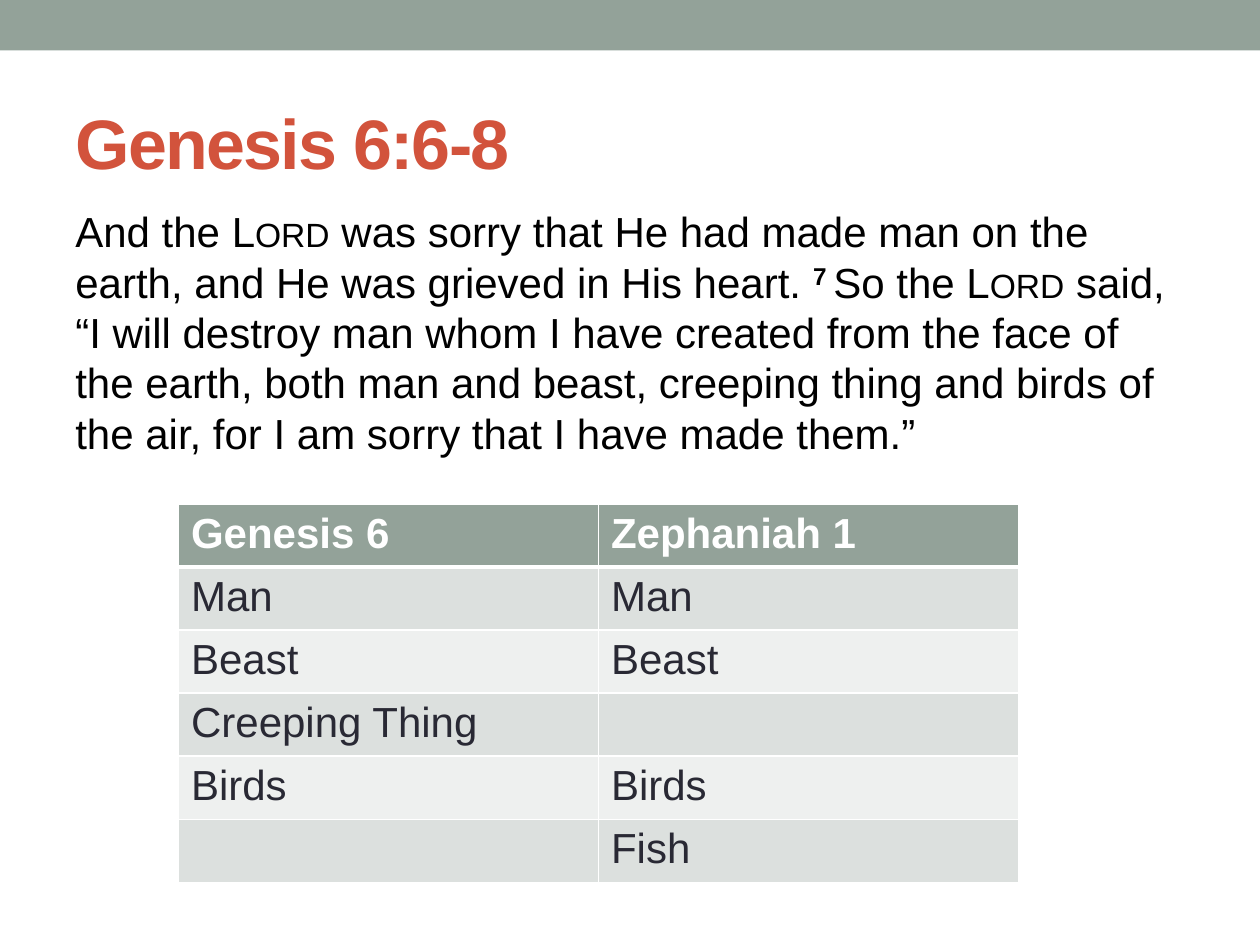
from pptx import Presentation
from pptx.dml.color import RGBColor
from pptx.enum.shapes import MSO_SHAPE
from pptx.enum.text import MSO_ANCHOR, PP_ALIGN
from pptx.oxml.ns import qn
from pptx.util import Pt
from lxml.etree import SubElement

SAGE = RGBColor(0x93, 0xA2, 0x99)
RUST = RGBColor(0xD2, 0x53, 0x3C)
BLACK = RGBColor(0, 0, 0)
WHITE = RGBColor(0xFF, 0xFF, 0xFF)
INK = RGBColor(0x29, 0x29, 0x34)
BANDS = [RGBColor(0xDC, 0xE0, 0xDE), RGBColor(0xEE, 0xF0, 0xEF)]

# Each span of the verse with its extra run attributes
SMALL_CAPS = {"cap": "small"}
VERSE_NUMBER = {"b": "1", "baseline": "30000"}
VERSE = [
    ("And the ", {}),
    ("Lord", SMALL_CAPS),
    (" was sorry that He had made man on the earth, "
     "and He was grieved in His heart. ", {}),
    ("7 ", VERSE_NUMBER),
    ("So the ", {}),
    ("Lord", SMALL_CAPS),
    (" said, “I will destroy man whom I have created from the face of "
     "the earth, both man and beast, creeping thing and birds of the air, "
     "for I am sorry that I have made them.”", {}),
]
COMPARISON = [
    ("Genesis 6", "Zephaniah 1"),
    ("Man", "Man"),
    ("Beast", "Beast"),
    ("Creeping Thing", ""),
    ("Birds", "Birds"),
    ("", "Fish"),
]


def set_font(para, size, color, bold=False):
    font = para.font
    font.name, font.size, font.bold = "Arial", Pt(size), bold
    font.color.rgb = color


def add_band(page, left, top, width, height):
    band = page.shapes.add_shape(MSO_SHAPE.RECTANGLE, Pt(left), Pt(top), Pt(width), Pt(height))
    band.shadow.inherit = False
    band.fill.solid()
    band.fill.fore_color.rgb = SAGE
    band.line.fill.background()


def place_title(page, text, left, top, width, height):
    title = page.shapes.title
    title.left, title.top, title.width, title.height = map(Pt, (left, top, width, height))
    frame = title.text_frame
    frame.text = text
    frame.vertical_anchor = MSO_ANCHOR.MIDDLE
    para = frame.paragraphs[0]
    para.alignment = PP_ALIGN.LEFT
    set_font(para, 40, RUST, bold=True)
    para.runs[0].font._element.set("spc", "-100")


def add_verse(page, left, top, width, height):
    box = page.shapes.add_textbox(Pt(left), Pt(top), Pt(width), Pt(height))
    box.text_frame.word_wrap = True
    para = box.text_frame.paragraphs[0]
    set_font(para, 24, BLACK)
    for text, attributes in VERSE:
        span = para.add_run()
        span.text = text
        for name, value in attributes.items():
            span.font._element.set(name, value)


def set_borders(cell, **widths):
    properties = cell._tc.get_or_add_tcPr()
    for side in "LRTB":
        line = SubElement(properties, qn(f"a:ln{side}"), w=str(Pt(widths.get(side, 1))))
        fill = SubElement(line, qn("a:solidFill"))
        SubElement(fill, qn("a:srgbClr"), val=str(WHITE))


def add_comparison(page, left, top, width, row_height):
    rows, columns = len(COMPARISON), len(COMPARISON[0])
    table = page.shapes.add_table(rows, columns, Pt(left), Pt(top), Pt(width),
                                  Pt(rows * row_height)).table
    for row, texts in enumerate(COMPARISON):
        header = row == 0
        # A thick rule parts the header from the body
        rule = {"B": 3} if header else {"T": 3} if row == 1 else {}
        for column, text in enumerate(texts):
            cell = table.cell(row, column)
            cell.text = text
            set_font(cell.text_frame.paragraphs[0], 24, WHITE if header else INK, header)
            set_borders(cell, **rule)
            cell.fill.solid()
            cell.fill.fore_color.rgb = SAGE if header else BANDS[(row - 1) % 2]


def main():
    deck = Presentation()
    deck.slide_width, deck.slide_height = Pt(720), Pt(540)
    page = deck.slides.add_slide(deck.slide_layouts[5])
    add_band(page, 0, 0, 720, 28.8)
    place_title(page, "Genesis 6:6-8", 36, 42, 648, 78)
    add_verse(page, 36, 114, 648, 156)
    add_comparison(page, 102, 288, 480, 29.2)
    deck.save("out.pptx")


if __name__ == "__main__":
    main()
